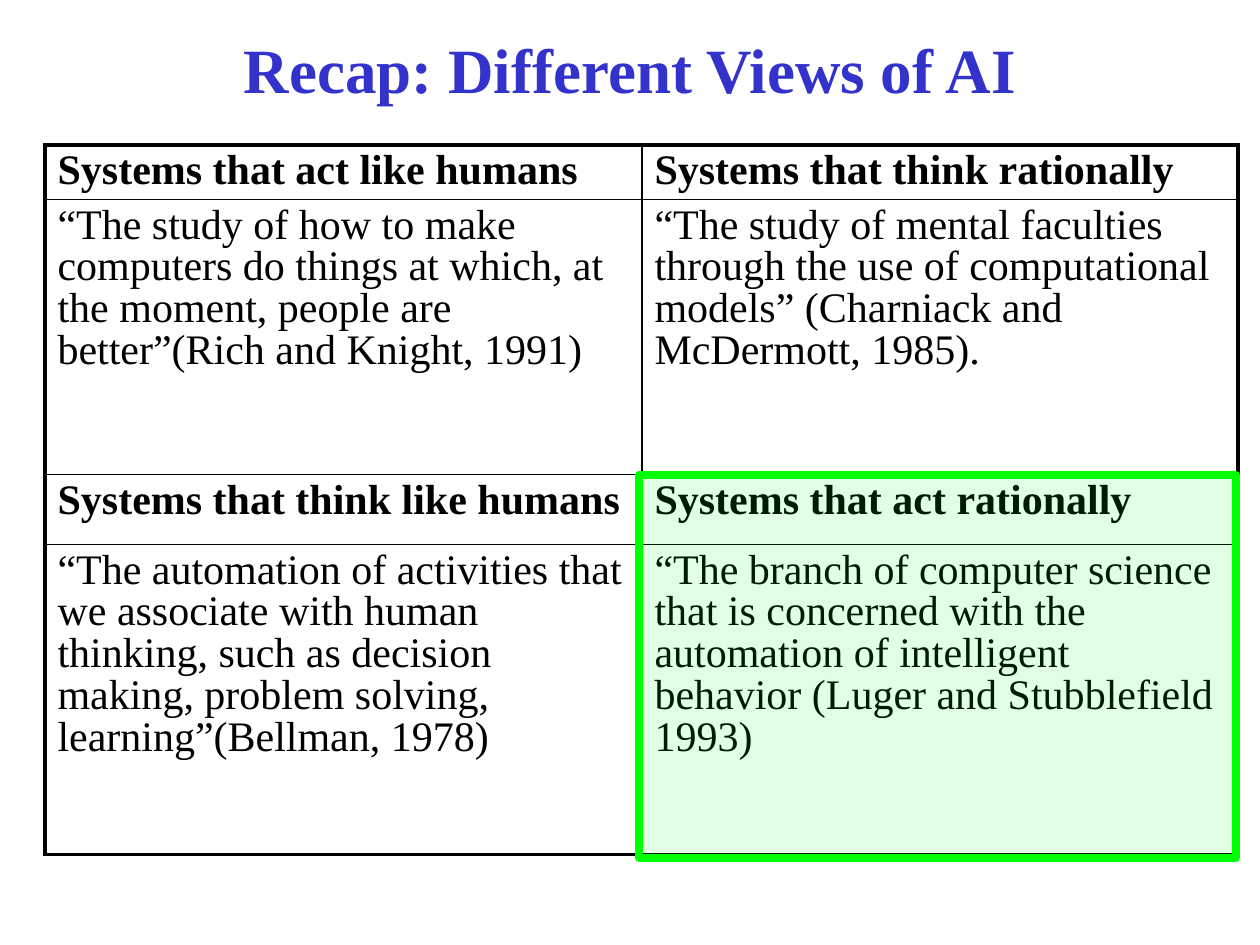
from lxml import etree
from pptx import Presentation
from pptx import util as u
from pptx.dml.color import RGBColor
from pptx.enum import shapes, text
from pptx.oxml import ns

PX = u.Inches(1) / 126
FONT = "Times New Roman"
BLACK = RGBColor(0x00, 0x00, 0x00)
BLUE = RGBColor(0x33, 0x33, 0xCC)
GREEN = RGBColor(0x00, 0xFF, 0x00)
THIN, THICK = 1, 2.25

COLUMN_WIDTHS = (597, 596)
ROW_HEIGHTS = (49, 275, 70, 310)
VIEWS = (
    ("Systems that act like humans", "Systems that think rationally"),
    (
        "“The study of how to make computers do things at which, at the moment, "
        "people are better”(Rich and Knight, 1991)",
        "“The study of mental faculties through the use of computational models” "
        "(Charniack and McDermott, 1985).",
    ),
    ("Systems that think like humans", "Systems that act rationally"),
    (
        "“The automation of activities that we associate with human thinking, such as "
        "decision making, problem solving, learning”(Bellman, 1978)",
        "“The branch of computer science that is concerned with the automation of "
        "intelligent behavior (Luger and Stubblefield 1993)",
    ),
)


def px(length):
    return u.Emu(round(length * PX))


def add_run(paragraph, wording, size, color, bold):
    run = paragraph.add_run()
    run.text = wording
    run.font.name = FONT
    run.font.size = u.Pt(size)
    run.font.bold = bold
    run.font.color.rgb = color


def set_title(slide, wording):
    title = slide.shapes.title
    title.left, title.top, title.width, title.height = map(px, (42, 21, 1176, 95))
    frame = title.text_frame
    frame.auto_size = text.MSO_AUTO_SIZE.NONE
    frame.vertical_anchor = text.MSO_ANCHOR.MIDDLE
    heading = frame.paragraphs[0]
    heading.alignment = text.PP_ALIGN.CENTER
    add_run(heading, wording, 36, BLUE, True)


def set_borders(cell, widths):
    properties = cell._tc.get_or_add_tcPr()
    for position, (side, width) in enumerate(widths.items()):
        border = etree.Element(ns.qn(f"a:ln{side}"), w=str(u.Pt(width)))
        fill = etree.SubElement(border, ns.qn("a:solidFill"))
        etree.SubElement(fill, ns.qn("a:srgbClr"), val=str(BLACK))
        properties.insert(position, border)


def add_views_table(slide):
    rows, columns = len(ROW_HEIGHTS), len(COLUMN_WIDTHS)
    table = slide.shapes.add_table(
        rows, columns, px(45), px(145), px(sum(COLUMN_WIDTHS)), px(sum(ROW_HEIGHTS))
    ).table
    for column, width in zip(table.columns, COLUMN_WIDTHS):
        column.width = px(width)
    for r, (height, wordings) in enumerate(zip(ROW_HEIGHTS, VIEWS)):
        table.rows[r].height = px(height)
        for c, wording in enumerate(wordings):
            cell = table.cell(r, c)
            cell.fill.background()
            set_borders(cell, {
                "L": THICK if c == 0 else THIN,
                "R": THICK if c == columns - 1 else THIN,
                "T": THICK if r == 0 else THIN,
                "B": THICK if r == rows - 1 else THIN,
            })
            view = cell.text_frame.paragraphs[0]
            view.line_spacing = 0.9
            add_run(view, wording, 24, BLACK, r % 2 == 0)


def add_highlight(slide):
    highlight = slide.shapes.add_shape(
        shapes.MSO_SHAPE.RECTANGLE, px(639), px(475), px(597), px(383)
    )
    highlight.shadow.inherit = False
    highlight.fill.solid()
    highlight.fill.fore_color.rgb = GREEN
    tint = highlight.fill._xPr.find(f".//{ns.qn('a:srgbClr')}")
    etree.SubElement(tint, ns.qn("a:alpha"), val="11000")
    highlight.line.color.rgb = GREEN
    highlight.line.width = u.Pt(4.25)


def main():
    deck = Presentation()
    deck.slide_width, deck.slide_height = u.Inches(10), u.Inches(7.5)
    slide = deck.slides.add_slide(deck.slide_layouts[5])
    set_title(slide, "Recap: Different Views of AI")
    add_views_table(slide)
    add_highlight(slide)
    deck.save("out.pptx")


if __name__ == "__main__":
    main()
